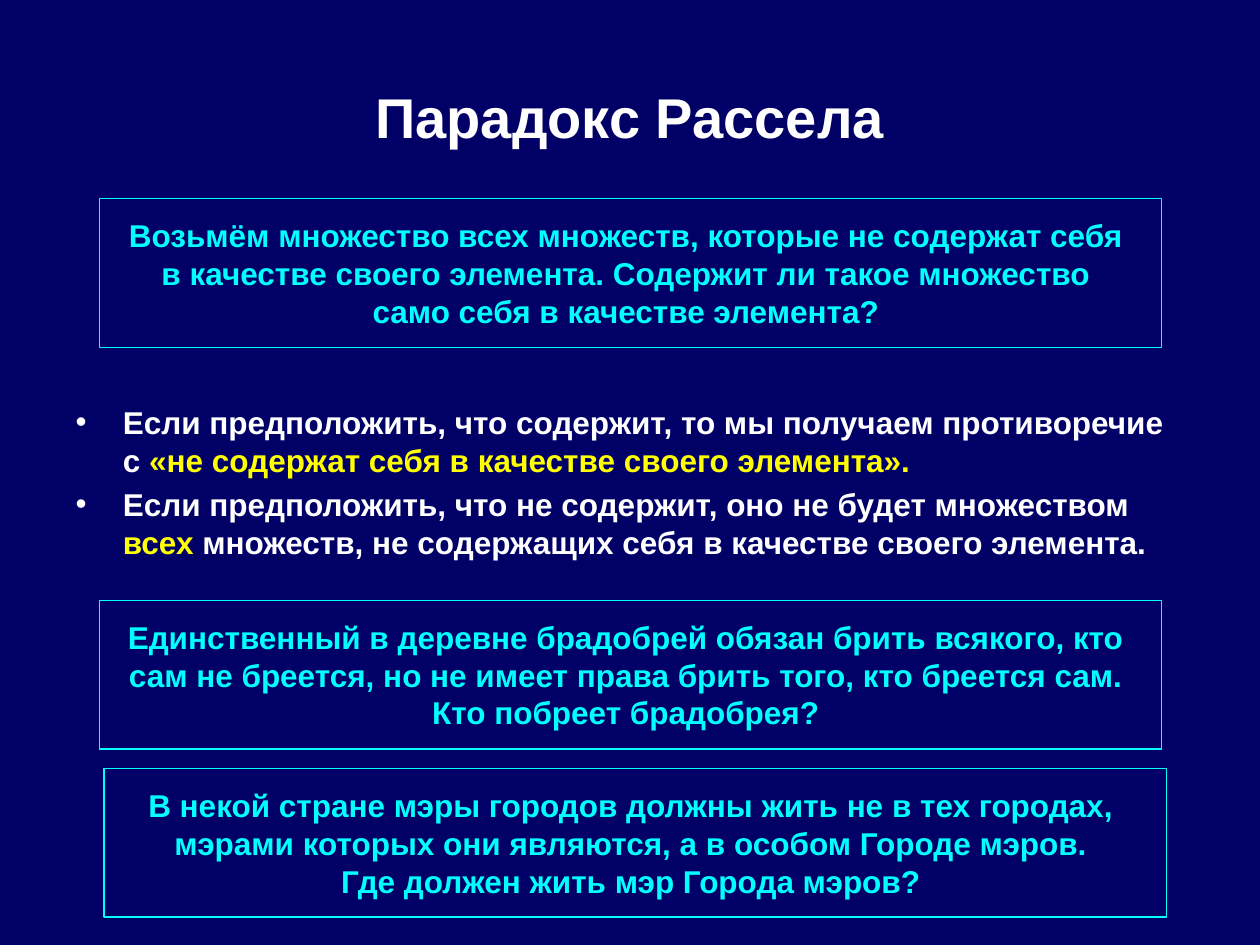
from pptx import Presentation
from pptx.dml.color import RGBColor
from pptx.enum.shapes import MSO_SHAPE
from pptx.enum.text import MSO_ANCHOR, MSO_AUTO_SIZE, PP_ALIGN
from pptx.util import Cm, Pt

NAVY = RGBColor(0x00, 0x00, 0x66)
WHITE = RGBColor(0xFF, 0xFF, 0xFF)
CYAN = RGBColor(0x00, 0xFF, 0xFF)
YELLOW = RGBColor(0xFF, 0xFF, 0x00)

TITLE = "Парадокс Рассела"
ARGUMENTS = [
    [("Если предположить, что содержит, то мы получаем противоречие с ", WHITE),
     ("«не содержат себя в качестве своего элемента».", YELLOW)],
    [("Если предположить, что не содержит, оно не будет множеством ", WHITE),
     ("всех", YELLOW),
     (" множеств, не содержащих себя в качестве своего элемента.", WHITE)],
]
# left and top in cm, lines of the riddle
RIDDLES = [
    (2, 4, ["Возьмём множество всех множеств, которые не содержат себя ",
            "в качестве своего элемента. Содержит ли такое множество ",
            "само себя в качестве элемента? "]),
    (2, 12.1, ["Единственный в деревне брадобрей обязан брить всякого, кто ",
               "сам не бреется, но не имеет права брить того, кто бреется сам. ",
               "Кто побреет брадобрея? "]),
    (2.1, 15.49, ["В некой стране мэры городов должны жить не в тех городах, ",
                  "мэрами которых они являются, а в особом Городе мэров. ",
                  "Где должен жить мэр Города мэров? "]),
]
BOX_W, BOX_H = Cm(21.41), Cm(3)


def add_text(p, text, size=18, color=WHITE):
    r = p.add_run()
    r.text = text
    r.font.name = "Arial"
    r.font.size = Pt(size)
    r.font.bold = True
    r.font.color.rgb = color


def place(sp, left, top, width, height):
    sp.left, sp.top, sp.width, sp.height = Cm(left), Cm(top), Cm(width), Cm(height)
    sp.text_frame.auto_size = MSO_AUTO_SIZE.NONE


def add_riddle(s, left, top, lines):
    sp = s.shapes.add_shape(MSO_SHAPE.RECTANGLE, Cm(left), Cm(top), BOX_W, BOX_H)
    sp.shadow.inherit = False
    sp.fill.background()
    sp.line.color.rgb = CYAN
    sp.line.width = Pt(0.75)
    tf = sp.text_frame
    tf.word_wrap = False
    tf.vertical_anchor = MSO_ANCHOR.MIDDLE
    p = tf.paragraphs[0]
    p.alignment = PP_ALIGN.CENTER
    p.space_before = p.space_after = Pt(4)
    for i, line in enumerate(lines):
        if i:
            p.add_line_break()
        add_text(p, line, color=CYAN)


prs = Presentation()
prs.slide_width, prs.slide_height = Cm(25.4), Cm(19.05)
s = prs.slides.add_slide(prs.slide_layouts[1])
s.background.fill.solid()
s.background.fill.fore_color.rgb = NAVY

title, body = s.placeholders
place(title, 1.27, 0.76, 22.86, 3.18)
title.text_frame.vertical_anchor = MSO_ANCHOR.MIDDLE
p = title.text_frame.paragraphs[0]
p.alignment = PP_ALIGN.CENTER
add_text(p, TITLE, size=32)

# Bullets, hanging indent and spacing come from the body placeholder
place(body, 1.27, 8, 22.86, 3.71)
tf = body.text_frame
for i, parts in enumerate(ARGUMENTS):
    p = tf.add_paragraph() if i else tf.paragraphs[0]
    for text, color in parts:
        add_text(p, text, color=color)

for left, top, lines in RIDDLES:
    add_riddle(s, left, top, lines)

prs.save("out.pptx")
